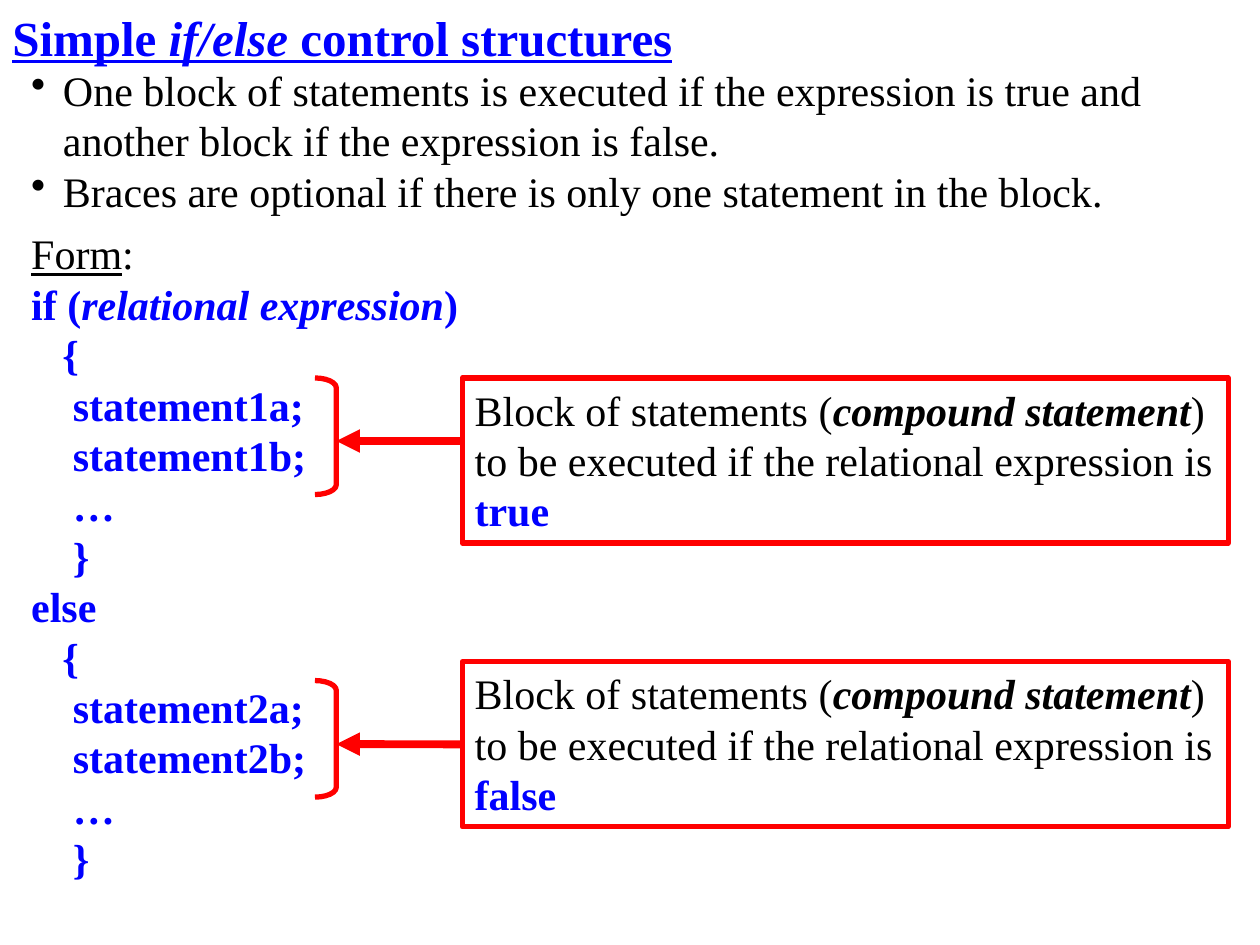
from typing import NamedTuple

from lxml.etree import SubElement
from pptx import Presentation
from pptx.dml.color import RGBColor
from pptx.enum.shapes import MSO_CONNECTOR, MSO_SHAPE
from pptx.enum.text import MSO_ANCHOR, PP_ALIGN
from pptx.oxml.ns import qn
from pptx.util import Cm, Pt

COLORS = {"text": "000000", "code": "0000FF", "mark": "FF0000"}
FONT = "Times New Roman"
SPACE = 0.21  # width of one space at 24 pt, in cm
BOX_X, BOX_W, BOX_H = 9.32, 15.44, 3.33
BRACE_X, BRACE_W, BRACE_H = 6.35, 0.43, 2.35


class Bit(NamedTuple):
    text: str
    bold: bool | None = None
    italic: bool | None = None
    under: bool | None = None
    color: str | None = None


class Line(NamedTuple):
    bits: list[Bit]
    color: str = "text"
    bold: bool = False
    under: bool = False
    size: int = 24
    indent: float = 0
    bullet: bool = False


class Branch(NamedTuple):
    word: str
    box_y: float
    brace_y: float
    arrow_y: float
    joined: bool


def paint(color: str) -> RGBColor:
    return RGBColor.from_string(COLORS[color])


def write(frame, lines: list[Line]) -> None:
    for i, line in enumerate(lines):
        para = frame.paragraphs[0] if i == 0 else frame.add_paragraph()
        para.alignment = PP_ALIGN.LEFT
        font = para.font
        font.name, font.size = FONT, Pt(line.size)
        font.bold, font.underline = line.bold, line.under
        font.color.rgb = paint(line.color)
        props = para._p.get_or_add_pPr()
        if line.indent:
            props.set("marL", str(Cm(line.indent)))
        if line.bullet:
            props.set("indent", str(-Cm(line.indent)))
            mark = SubElement(props, qn("a:buChar"))
            mark.set("char", "•")
            props.insert(0, mark)
        for bit in line.bits:
            if bit.text == "\n":
                para.add_line_break()
                continue
            run = para.add_run()
            run.text = bit.text
            run.font.bold, run.font.italic = bit.bold, bit.italic
            run.font.underline = bit.under
            if bit.color:
                run.font.color.rgb = paint(bit.color)


def add_text(slide, x: float, y: float, w: float, h: float,
             lines: list[Line], wrap: bool = True):
    box = slide.shapes.add_textbox(Cm(x), Cm(y), Cm(w), Cm(h))
    box.text_frame.word_wrap = wrap
    write(box.text_frame, lines)
    return box


def add_frame(slide, kind: MSO_SHAPE, x: float, y: float, w: float, h: float):
    """Add a red outline without fill or shadow."""
    shape = slide.shapes.add_shape(kind, Cm(x), Cm(y), Cm(w), Cm(h))
    shape.shadow.inherit = False
    shape.fill.background()
    shape.line.color.rgb = paint("mark")
    shape.line.width = Pt(3)
    return shape


def add_arrow(slide, branch: Branch, box) -> None:
    """Point from the note to its bracket."""
    y = Cm(branch.arrow_y)
    arrow = slide.shapes.add_connector(
        MSO_CONNECTOR.STRAIGHT, Cm(BRACE_X + BRACE_W), y, Cm(BOX_X), y)
    if branch.joined:
        arrow.end_connect(box, 1)
    arrow.line.color.rgb = paint("mark")
    arrow.line.width = Pt(4.5)
    SubElement(arrow.line._get_or_add_ln(), qn("a:headEnd")).set("type", "triangle")
    SubElement(arrow._element.spPr, qn("a:effectLst"))


def add_branch(slide, branch: Branch) -> None:
    box = add_frame(slide, MSO_SHAPE.RECTANGLE, BOX_X, branch.box_y, BOX_W, BOX_H)
    box.text_frame.word_wrap = True
    box.text_frame.vertical_anchor = MSO_ANCHOR.TOP
    write(box.text_frame, [Line([
        Bit("Block of statements ("),
        Bit("compound statement", bold=True, italic=True),
        Bit(")"),
        Bit("\n"),
        Bit("to be executed if the relational expression is "),
        Bit(branch.word, bold=True, color="code"),
    ])])
    add_arrow(slide, branch, box)
    brace = add_frame(slide, MSO_SHAPE.RIGHT_BRACKET,
                      BRACE_X, branch.brace_y, BRACE_W, BRACE_H)
    brace.adjustments[0] = 0.46


def code(*bits: Bit, spaces: int = 0) -> Line:
    return Line(list(bits), "code", bold=True, indent=spaces * SPACE)


def block(num: int) -> list[Line]:
    """Give the braced statements of one branch."""
    inner = (f"statement{num}a;", f"statement{num}b;", "…", "}")
    return [code(Bit("{"), spaces=3),
            *(code(Bit(text), spaces=4) for text in inner)]


def main() -> None:
    deck = Presentation()
    deck.slide_width, deck.slide_height = Cm(25.4), Cm(19.05)
    slide = deck.slides.add_slide(deck.slide_layouts[6])

    title = add_text(slide, 0, 0, 21.59, 1.47, [Line(
        [Bit("Simple "), Bit("if/else", italic=True), Bit(" control structures")],
        "code", bold=True, under=True, size=28)])
    title.text_frame.vertical_anchor = MSO_ANCHOR.MIDDLE

    add_text(slide, 0.38, 4.47, 9.12, 13.44, [
        Line([Bit("Form", under=True), Bit(":")]),
        code(Bit("if ("), Bit("relational expression", italic=True), Bit(")")),
        *block(1),
        code(Bit("else")),
        *block(2),
    ], wrap=False)

    points = (
        "One block of statements is executed if the expression is true "
        "and another block if the expression is false.",
        "Braces are optional if there is only one statement in the block.",
    )
    add_text(slide, 0.38, 1.17, 24.38, 3.3, [
        Line([Bit(text)], indent=0.64, bullet=True) for text in points])

    for branch in (Branch("true", 7.62, 7.62, 8.89, False),
                   Branch("false", 13.34, 13.72, 15.0, True)):
        add_branch(slide, branch)

    deck.save("out.pptx")


if __name__ == "__main__":
    main()
